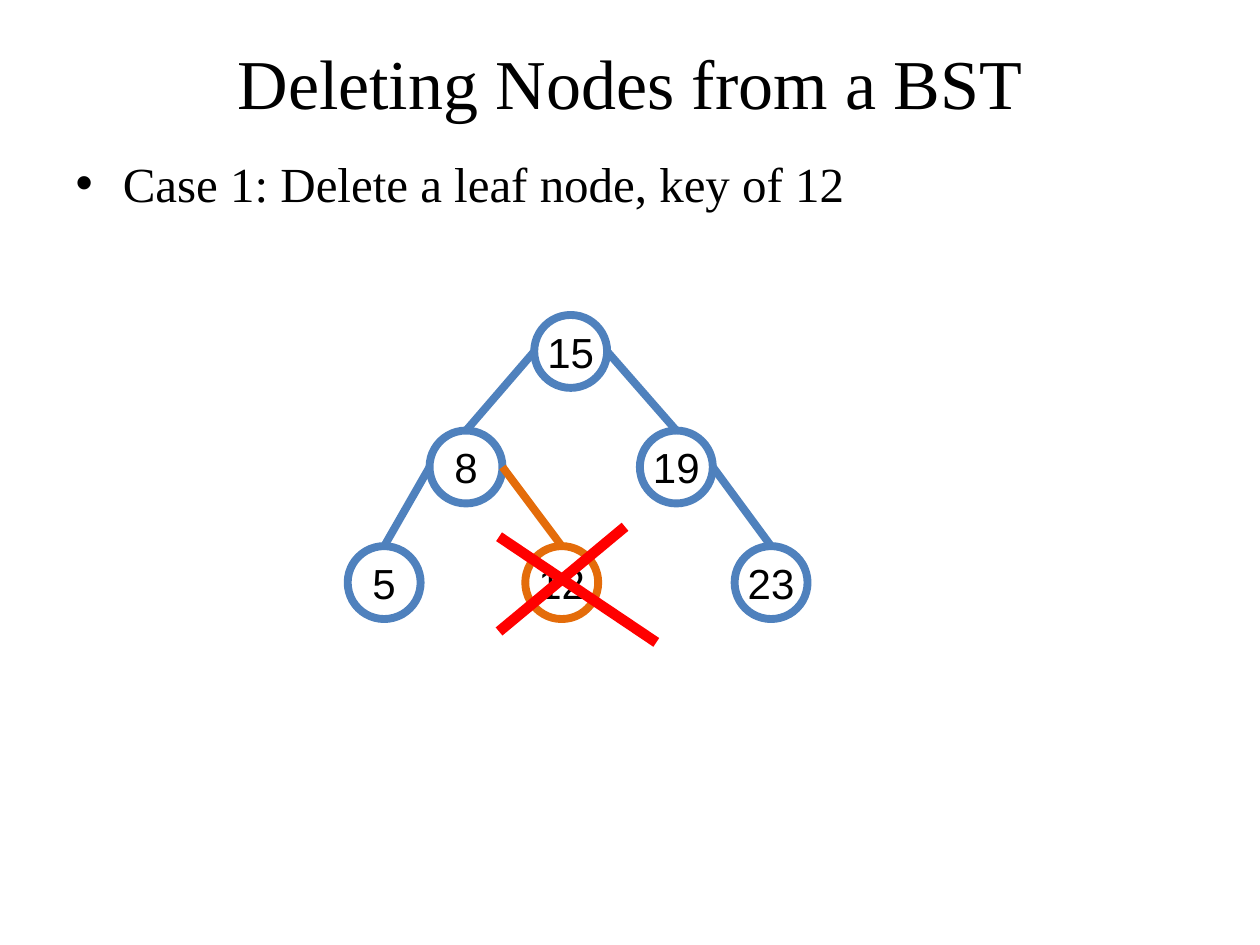
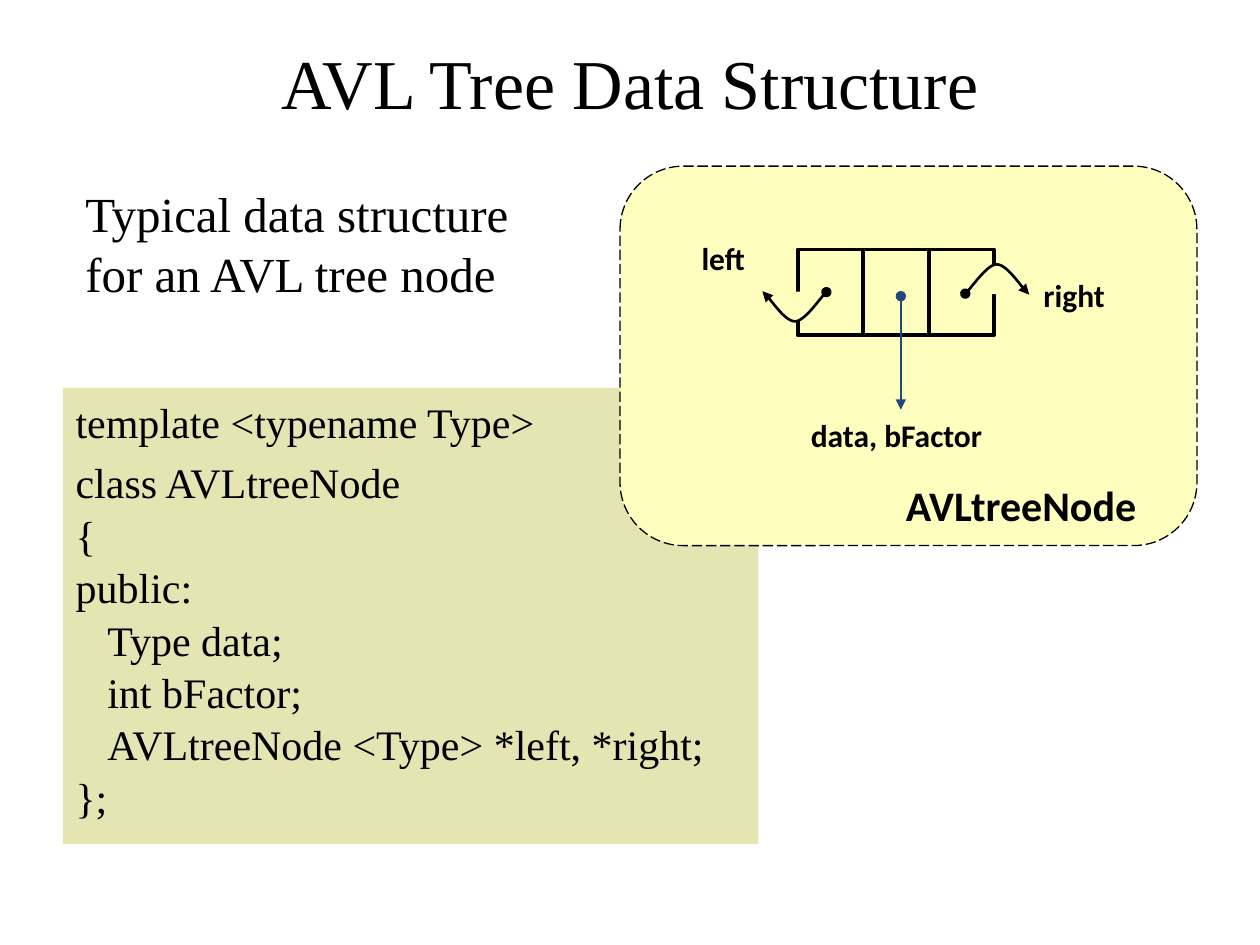
from dataclasses import dataclass
from typing import NamedTuple, Optional

from lxml import etree
from pptx import Presentation
from pptx import util as u
from pptx.dml.color import RGBColor
from pptx.enum import dml, shapes, text
from pptx.oxml import ns

Cm, Pt = u.Cm, u.Pt


@dataclass(frozen=True)
class Theme:
    ink: str = "000000"
    node: str = "4F81BD"
    removed: str = "E46C0A"
    cross: str = "FF0000"
    code: str = "E5E5B4"
    panel: str = "FEFEBE"
    pointer: str = "1F497D"
    serif: str = "Times New Roman"
    sans: str = "Arial"
    label: str = "Calibri"
    title_size: int = 40
    lead_size: int = 28
    text_size: int = 24
    label_size: int = 18


T = Theme()


class Box(NamedTuple):
    """Left, top, width and height in centimetres."""
    x: float
    y: float
    w: float
    h: float

    def emu(self) -> list:
        return [Cm(v) for v in self]


class Point(NamedTuple):
    x: float
    y: float


class Node(NamedTuple):
    key: int
    x: float
    level: int
    parent: Optional[int] = None
    color: str = T.node


class Label(NamedTuple):
    text: str
    box: Box
    size: int = T.label_size


TITLE_BOX = Box(1.27, 0.76, 22.86, 1.78)

# Binary search tree
DIAMETER, TREE_TOP, LEVEL_STEP = 1.47, 6.35, 2.33
NODES = [
    Node(15, 10.77, 0),
    Node(8, 8.66, 1, 15),
    Node(19, 12.9, 1, 15),
    Node(5, 7.01, 2, 8),
    Node(23, 14.81, 2, 19),
    Node(12, 10.59, 2, 8, T.removed),
]
CROSS = [
    (Point(10.06, 12.73), Point(12.6, 10.62)),
    (Point(10.06, 10.82), Point(13.23, 12.95)),
]

# AVL tree node
CODE = [
    "template <typename Type>", "class AVLtreeNode", "{", "public:",
    "Type data;", "int bFactor;", "AVLtreeNode <Type> *left, *right;", "};",
]
MEMBERS = CODE[4:7]
FIELD = Box(16.08, 5.03, 1.32, 1.73)
LABELS = [
    Label("right", Box(20.78, 5.44, 1.75, 1.02)),
    Label("data, bFactor", Box(16.08, 8.26, 3.99, 1.02)),
    Label("AVLtreeNode", Box(17.98, 9.55, 5.21, 1.27), T.text_size),
    Label("left", Box(13.87, 4.7, 1.42, 1.02)),
]
# Two joined Bézier curves; the left pointer is the right one turned half round
RIGHT_POINTER = [
    Point(19.46, 5.92), Point(19.56, 5.84), Point(19.89, 5.33),
    Point(20.09, 5.33), Point(20.32, 5.33), Point(20.6, 5.82),
    Point(20.75, 5.94),
]
LEFT_POINTER = [Point(36.12 - p.x, 11.81 - p.y) for p in RIGHT_POINTER]


def write(tf, lines: list, *, size: int, font: str = T.serif, bold: bool = False,
          align=None, anchor=None, wrap: bool = True, grow: bool = False,
          spacing: Optional[float] = None) -> None:
    """Fill a text frame with one paragraph per line."""
    tf.word_wrap = wrap
    tf.auto_size = (text.MSO_AUTO_SIZE.SHAPE_TO_FIT_TEXT if grow
                    else text.MSO_AUTO_SIZE.NONE)
    if anchor is not None:
        tf.vertical_anchor = anchor
    for i, line in enumerate(lines):
        p = tf.add_paragraph() if i else tf.paragraphs[0]
        p.alignment = align
        p.line_spacing = spacing
        r = p.add_run()
        r.text = line
        r.font.size, r.font.name, r.font.bold = Pt(size), font, bold
        r.font.color.rgb = RGBColor.from_string(T.ink)


def style_line(line, color: str, width: float) -> None:
    line.color.rgb = RGBColor.from_string(color)
    line.width = Pt(width)


def add_ends(line) -> None:
    """Put a dot at the start and an arrowhead at the end."""
    ln = line._get_or_add_ln()
    for tag, kind in (("a:headEnd", "oval"), ("a:tailEnd", "triangle")):
        etree.SubElement(ln, ns.qn(tag), type=kind)


def paint(sp, fill: Optional[str], line: Optional[str], width: float) -> None:
    sp.shadow.inherit = False
    if fill:
        sp.fill.solid()
        sp.fill.fore_color.rgb = RGBColor.from_string(fill)
    else:
        sp.fill.background()
    if line:
        style_line(sp.line, line, width)
    else:
        sp.line.fill.background()


def draw_shape(s, kind, box: Box, *, fill: Optional[str] = None,
               line: Optional[str] = None, width: float = 1):
    sp = s.shapes.add_shape(kind, *box.emu())
    paint(sp, fill, line, width)
    return sp


def draw_line(s, start: Point, end: Point, color: str, width: float):
    cx = s.shapes.add_connector(shapes.MSO_CONNECTOR.STRAIGHT,
                                *(Cm(v) for v in (*start, *end)))
    style_line(cx.line, color, width)
    etree.SubElement(cx._element.spPr, ns.qn("a:effectLst"))
    return cx


def bezier(a: Point, b: Point, c: Point, d: Point, steps: int = 16) -> list:
    points = []
    for i in range(1, steps + 1):
        t = i / steps
        weights = ((1 - t) ** 3, 3 * t * (1 - t) ** 2, 3 * t * t * (1 - t), t ** 3)
        points.append(tuple(
            Cm(sum(w * v for w, v in zip(weights, axis)))
            for axis in zip(a, b, c, d)))
    return points


def draw_pointer(s, knots: list) -> None:
    fb = s.shapes.build_freeform(Cm(knots[0].x), Cm(knots[0].y))
    fb.add_line_segments(bezier(*knots[:4]) + bezier(*knots[3:]), close=False)
    sp = fb.convert_to_shape()
    paint(sp, T.panel, T.ink, 1.5)
    add_ends(sp.line)


def place(sp, box: Box) -> None:
    sp.left, sp.top, sp.width, sp.height = box.emu()


def new_slide(prs, title: str, body_box: Box):
    """Add a titled slide and return it with its body placeholder."""
    s = prs.slides.add_slide(prs.slide_layouts[1])
    place(s.shapes.title, TITLE_BOX)
    write(s.shapes.title.text_frame, [title], size=T.title_size,
          align=text.PP_ALIGN.CENTER, anchor=text.MSO_ANCHOR.MIDDLE)
    body = s.placeholders[1]
    place(body, body_box)
    return s, body


def draw_tree(s) -> None:
    by_key = {n.key: n for n in NODES}
    radius = DIAMETER / 2
    for n in NODES:
        top = TREE_TOP + n.level * LEVEL_STEP
        center = n.x + radius
        draw_shape(s, shapes.MSO_SHAPE.OVAL, Box(n.x, top, DIAMETER, DIAMETER),
                   line=n.color, width=4.5)
        # Edge from the side of the parent to the top of the child
        if n.parent is not None:
            parent = by_key[n.parent]
            side = parent.x + (DIAMETER if n.x > parent.x else 0)
            draw_line(s, Point(side, top - LEVEL_STEP + radius),
                      Point(center, top), n.color, 4.5)
        # Key
        w, h = (1.45 if n.key > 9 else 1), 1.27
        tb = s.shapes.add_textbox(
            *Box(center - w / 2, top + radius - h / 2, w, h).emu())
        write(tb.text_frame, [str(n.key)], size=T.text_size, font=T.sans,
              align=text.PP_ALIGN.CENTER, anchor=text.MSO_ANCHOR.MIDDLE,
              wrap=False, grow=True)


def deletion_slide(prs) -> None:
    s, body = new_slide(prs, "Deleting Nodes from a BST",
                        Box(1.27, 2.97, 22.86, 14.05))
    write(body.text_frame, ["Case 1: Delete a leaf node, key of 12"],
          size=T.lead_size)
    draw_tree(s)
    for start, end in CROSS:
        draw_line(s, start, end, T.cross, 6)


def write_code(body) -> None:
    body.fill.solid()
    body.fill.fore_color.rgb = RGBColor.from_string(T.code)
    write(body.text_frame, CODE, size=T.text_size, spacing=1.04)
    for i, p in enumerate(body.text_frame.paragraphs):
        if i > 1:
            p.space_before = Pt(0)
        pPr = p._p.get_or_add_pPr()
        pPr.set("marL", str(Cm(0.64) if p.text in MEMBERS else 0))
        pPr.set("indent", "0")
        etree.SubElement(pPr, ns.qn("a:buNone"))


def draw_node_diagram(s) -> None:
    rect = shapes.MSO_SHAPE.RECTANGLE
    panel = draw_shape(s, shapes.MSO_SHAPE.ROUNDED_RECTANGLE,
                       Box(12.5, 3.35, 11.63, 7.65),
                       fill=T.panel, line=T.ink, width=0.75)
    panel.line.dash_style = dml.MSO_LINE.LONG_DASH
    # Fields: left, data, right
    for i in range(3):
        draw_shape(s, rect, FIELD._replace(x=FIELD.x + i * FIELD.w),
                   fill=T.panel, line=T.ink, width=2.25)
    for knots in (RIGHT_POINTER, LEFT_POINTER):
        draw_pointer(s, knots)
    # Labels
    for label in LABELS:
        sp = draw_shape(s, rect, label.box, fill=T.panel)
        write(sp.text_frame, [label.text], size=label.size, font=T.label,
              bold=True, align=text.PP_ALIGN.CENTER,
              anchor=text.MSO_ANCHOR.TOP, wrap=False, grow=True)
    # Arrow to the data
    add_ends(draw_line(s, Point(18.16, 5.97), Point(18.16, 8.26),
                       T.pointer, 1.5).line)


def structure_slide(prs) -> None:
    s, body = new_slide(prs, "AVL Tree Data Structure",
                        Box(1.27, 7.82, 14.02, 9.19))
    write_code(body)
    draw_node_diagram(s)
    tb = s.shapes.add_textbox(*Box(1.47, 3.53, 9.12, 2.64).emu())
    write(tb.text_frame, ["Typical data structure", "for an AVL tree node"],
          size=T.lead_size, wrap=False, grow=True, spacing=1.03)


def main() -> None:
    prs = Presentation()
    prs.slide_width, prs.slide_height = Cm(25.4), Cm(19.05)
    deletion_slide(prs)
    structure_slide(prs)
    prs.save("out.pptx")


if __name__ == "__main__":
    main()
